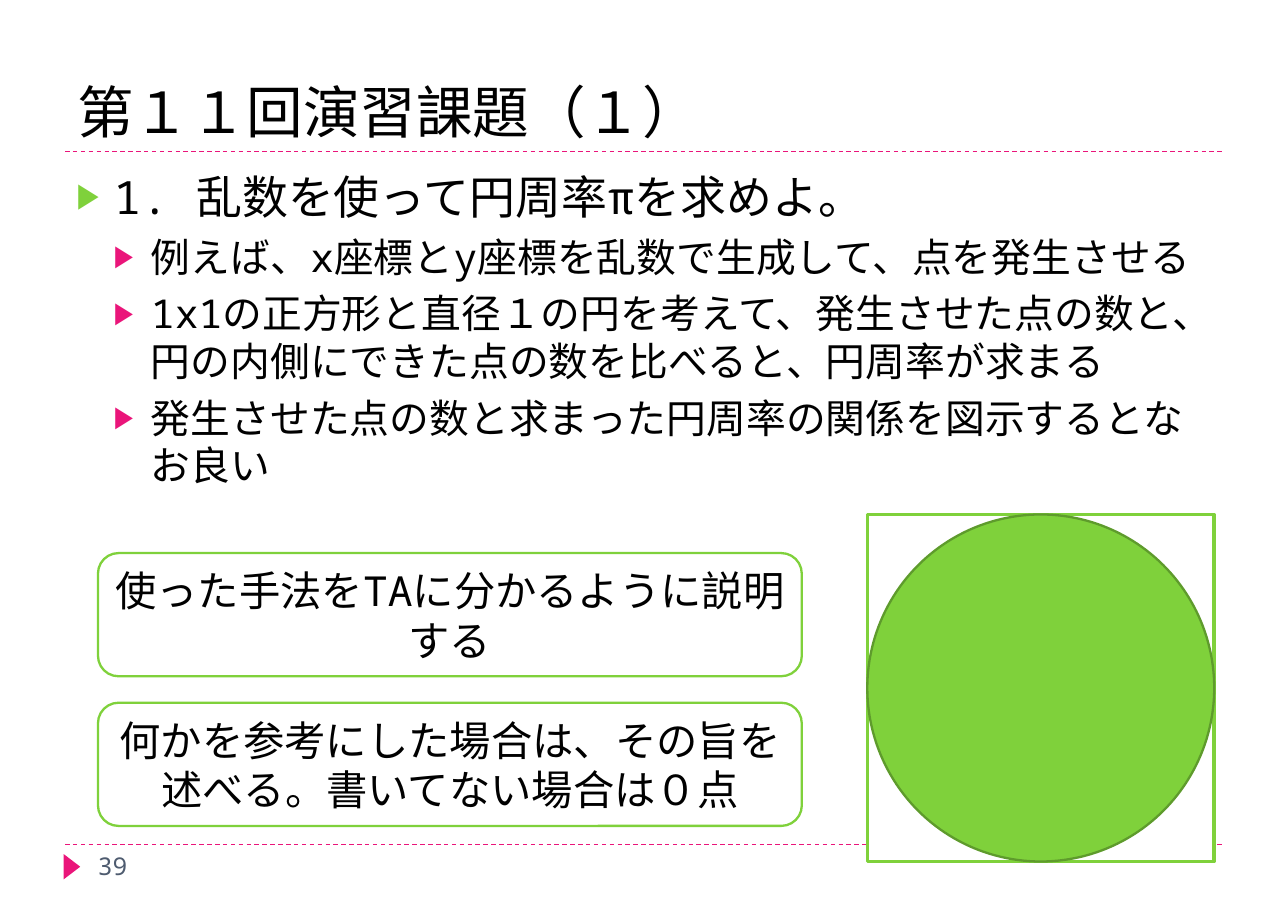
from dataclasses import dataclass

from lxml.etree import SubElement
from pptx import Presentation
from pptx.dml.color import RGBColor
from pptx.enum.dml import MSO_LINE_DASH_STYLE as Dash
from pptx.enum.shapes import MSO_CONNECTOR as Connector
from pptx.enum.shapes import MSO_SHAPE as Shape
from pptx.enum.text import MSO_ANCHOR as Anchor
from pptx.enum.text import MSO_AUTO_SIZE as AutoSize
from pptx.enum.text import PP_ALIGN as Align
from pptx.oxml.ns import qn
from pptx.util import Cm, Pt


@dataclass(frozen=True)
class Theme:
    heading_font: str = "Roboto"
    text_font: str = "Noto Sans Mono"
    ink: str = "000000"
    paper: str = "FFFFFF"
    green: str = "7FD13B"
    dark_green: str = "5E9B2C"
    pink: str = "EA157A"
    slate: str = "4E5B6F"
    title_size: float = 37
    task_size: float = 30
    hint_size: float = 26
    note_size: float = 27
    number_size: float = 16


THEME = Theme()
TITLE = "第１１回演習課題（１）"
TASKS = [
    (0, "1. 乱数を使って円周率πを求めよ。"),
    (1, "例えば、x座標とy座標を乱数で生成して、点を発生させる"),
    (1, "1x1の正方形と直径１の円を考えて、発生させた点の数と、円の内側にできた点の数を比べると、円周率が求まる"),
    (1, "発生させた点の数と求まった円周率の関係を図示するとなお良い"),
]
LEVELS = [
    {"size": THEME.task_size, "before": 6.9, "bullet": THEME.green},
    {"size": THEME.hint_size, "before": 5.8, "bullet": THEME.pink},
]
NOTES = [
    (12.75, "使った手法をTAに分かるように説明する"),
    (16.2, "何かを参考にした場合は、その旨を述べる。書いてない場合は０点"),
]
RULE_LEFT, RULE_RIGHT = 1.5, 28.22
INDENT = 0.86
SQUARE = (20, 11.86, 8, 8)


def set_all(target, values):
    for name, value in values.items():
        setattr(target, name, value)


def place(shape, left, top, width, height):
    set_all(shape, {"left": Cm(left), "top": Cm(top),
                    "width": Cm(width), "height": Cm(height)})


def set_frame(frame, anchor):
    set_all(frame, {
        "word_wrap": True, "auto_size": AutoSize.NONE, "vertical_anchor": anchor,
        "margin_left": Cm(0.28), "margin_right": Cm(0.28),
        "margin_top": Cm(0.15), "margin_bottom": Cm(0.15),
    })


def write(para, text, size, font=THEME.text_font, color=THEME.ink, align=Align.LEFT):
    para.alignment = align
    span = para.add_run()
    span.text = text
    set_all(span.font, {"name": font, "size": Pt(size)})
    span.font.color.rgb = RGBColor.from_string(color)


def add_bullet(para, level, color):
    """Give the paragraph a hanging triangle bullet."""
    props = para._p.get_or_add_pPr()
    props.set("marL", str(Cm(INDENT * (level + 1))))
    props.set("indent", str(Cm(-INDENT)))
    tint = SubElement(props, qn("a:buClr"))
    SubElement(tint, qn("a:srgbClr"), val=color)
    SubElement(props, qn("a:buSzPct"), val="76000")
    SubElement(props, qn("a:buChar"), char="▶")


def add_rule(page, height):
    rule = page.shapes.add_connector(Connector.STRAIGHT, Cm(RULE_LEFT), Cm(height),
                                     Cm(RULE_RIGHT), Cm(height))
    set_all(rule.line, {"width": Pt(0.75), "dash_style": Dash.DASH})
    rule.line.color.rgb = RGBColor.from_string(THEME.pink)
    SubElement(rule._element.spPr, qn("a:effectLst"))


def add_figure(page, kind, area, fill, outline=None, weight=1.5):
    figure = page.shapes.add_shape(kind, *map(Cm, area))
    figure.shadow.inherit = False
    figure.fill.solid()
    figure.fill.fore_color.rgb = RGBColor.from_string(fill)
    if outline:
        figure.line.color.rgb = RGBColor.from_string(outline)
        figure.line.width = Pt(weight)
    else:
        figure.line.fill.background()
    return figure


def add_note(page, top, text):
    box = add_figure(page, Shape.ROUNDED_RECTANGLE, (2.26, top, 16.23, 2.84),
                     THEME.paper, THEME.green)
    frame = box.text_frame
    set_all(frame, {"word_wrap": True, "vertical_anchor": Anchor.MIDDLE})
    write(frame.paragraphs[0], text, THEME.note_size, align=Align.CENTER)


def fill_title(title):
    place(title, RULE_LEFT, 0.46, RULE_RIGHT - RULE_LEFT, 3.02)
    set_frame(title.text_frame, Anchor.BOTTOM)
    write(title.text_frame.paragraphs[0], TITLE, THEME.title_size, THEME.heading_font)


def fill_tasks(body):
    place(body, 1.48, 3.73, 26.74, 15.11)
    frame = body.text_frame
    set_frame(frame, Anchor.TOP)
    for index, (level, text) in enumerate(TASKS):
        para = frame.add_paragraph() if index else frame.paragraphs[0]
        style = LEVELS[level]
        set_all(para, {"level": level, "space_before": Pt(style["before"])})
        add_bullet(para, level, style["bullet"])
        write(para, text, style["size"])


def add_page_number(page, number):
    marker = add_figure(page, Shape.ISOSCELES_TRIANGLE, (1.37, 19.79, 0.58, 0.38), THEME.pink)
    marker.rotation = 90
    box = page.shapes.add_textbox(Cm(1.98), Cm(19.46), Cm(6.43), Cm(1.12))
    set_frame(box.text_frame, Anchor.TOP)
    write(box.text_frame.paragraphs[0], number, THEME.number_size, color=THEME.slate)


def main():
    deck = Presentation()
    set_all(deck, {"slide_width": Cm(29.7), "slide_height": Cm(21)})
    page = deck.slides.add_slide(deck.slide_layouts[1])
    fill_title(page.shapes.title)
    fill_tasks(page.placeholders[1])
    for height in (3.5, 19.46):
        add_rule(page, height)
    add_page_number(page, "39")
    add_figure(page, Shape.RECTANGLE, SQUARE, THEME.paper, THEME.green, 2.25)
    add_figure(page, Shape.OVAL, SQUARE, THEME.green, THEME.dark_green)
    for top, text in NOTES:
        add_note(page, top, text)
    deck.save("out.pptx")


if __name__ == "__main__":
    main()
